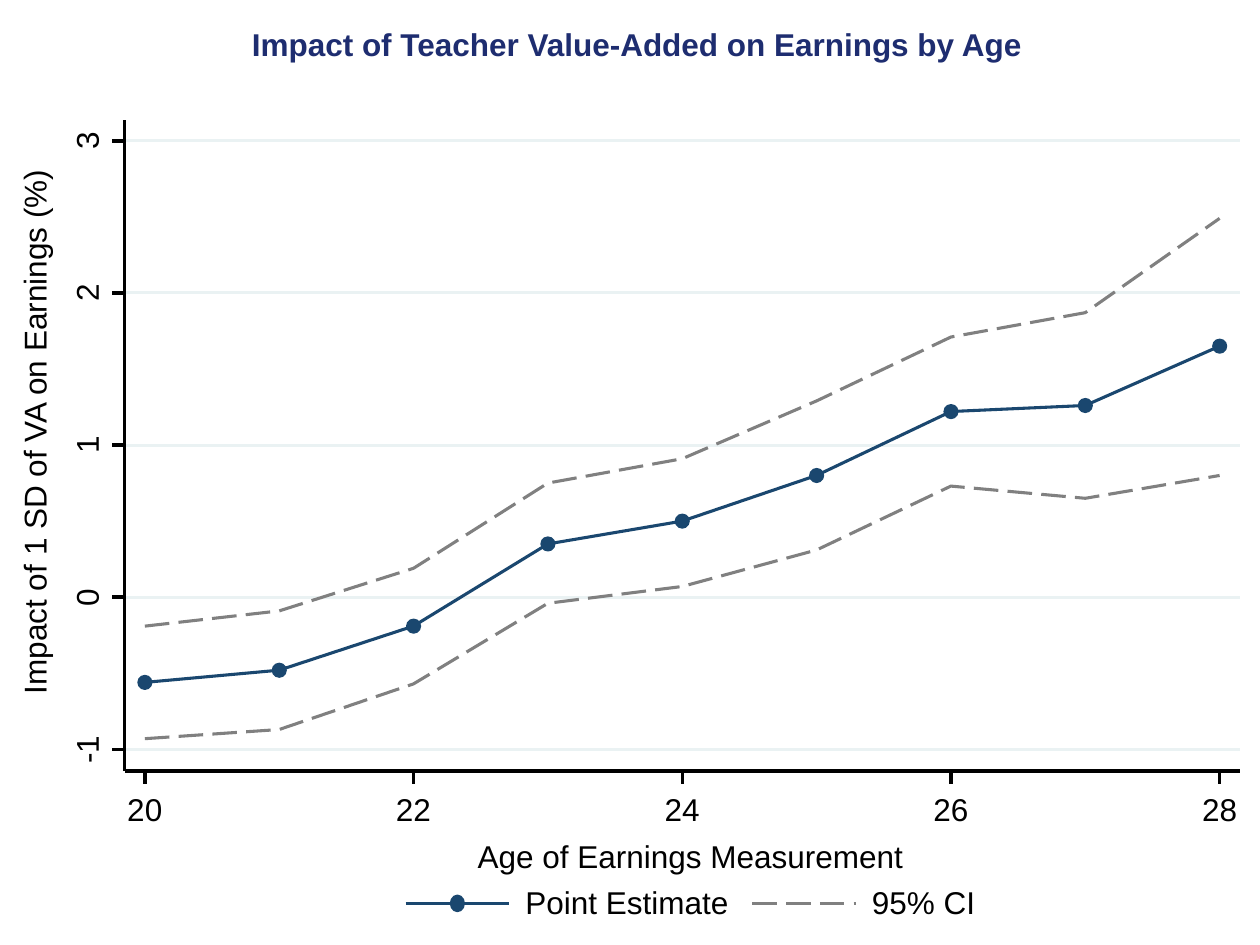
from pptx import Presentation
from pptx import util as u
from pptx.dml.color import RGBColor
from pptx.enum import dml, shapes, text
from pptx.oxml.ns import qn
from lxml import etree

THEME = {
    "font": "Arial", "size": 18, "title": "1E2D70", "ink": "000000",
    "estimate": "1A476F", "interval": "808080", "grid": "EAF2F3",
    "stroke": 1.75, "hairline": 0,
}
TITLE = "Impact of Teacher Value-Added on Earnings by Age"
X_TITLE = "Age of Earnings Measurement"
Y_TITLE = "Impact of 1 SD of VA on Earnings (%)"
AGES = range(20, 29)
ESTIMATE = [-0.56, -0.48, -0.19, 0.35, 0.5, 0.8, 1.22, 1.26, 1.65]
UPPER = [-0.19, -0.09, 0.19, 0.75, 0.91, 1.29, 1.71, 1.87, 2.49]
LOWER = [-0.93, -0.87, -0.57, -0.04, 0.07, 0.31, 0.73, 0.65, 0.8]
X_TICKS = range(20, 29, 2)
Y_TICKS = range(-1, 4)

LEFT, RIGHT, TOP, BOTTOM = 0.99, 9.84, 0.95, 6.12
TICK, DOT = 0.1, 0.11
LEGEND_Y, KEY_WIDTH = 7.17, 0.82


def x_at(age):
    return 1.15 + (age - 20) * 8.53 / 8


def y_at(percent):
    return 4.74 - percent * 1.2075


def color(name):
    return RGBColor.from_string(THEME[name])


def style_line(shape, ink, width, dashed=False):
    shape.line.color.rgb = color(ink)
    shape.line.width = u.Pt(THEME[width])
    if dashed:
        shape.line.dash_style = dml.MSO_LINE.LONG_DASH


def add_line(parent, start, end, ink="ink", width="hairline", dashed=False):
    points = [u.Inches(value) for value in (*start, *end)]
    line = parent.shapes.add_connector(shapes.MSO_CONNECTOR.STRAIGHT, *points)
    style_line(line, ink, width, dashed)
    etree.SubElement(line._element.spPr, qn("a:effectLst"))


def add_curve(parent, values, ink, dashed=False):
    points = [(u.Inches(x_at(age)), u.Inches(y_at(value)))
              for age, value in zip(AGES, values)]
    builder = parent.shapes.build_freeform(*points[0])
    builder.add_line_segments(points[1:], close=False)
    curve = builder.convert_to_shape()
    curve.fill.background()
    curve.shadow.inherit = False
    style_line(curve, ink, "stroke", dashed)


def add_dot(parent, x, y, height=DOT):
    dot = parent.shapes.add_shape(
        shapes.MSO_SHAPE.OVAL, u.Inches(x - DOT / 2), u.Inches(y - height / 2),
        u.Inches(DOT), u.Inches(height))
    dot.fill.solid()
    dot.fill.fore_color.rgb = color("estimate")
    dot.shadow.inherit = False
    style_line(dot, "estimate", "hairline")


def write(box, words, ink="ink", bold=False, align=None):
    frame = box.text_frame
    frame.text = words
    frame.margin_left = frame.margin_right = 0
    frame.margin_top = frame.margin_bottom = 0
    frame.vertical_anchor = text.MSO_ANCHOR.TOP
    frame.word_wrap = False
    frame.auto_size = text.MSO_AUTO_SIZE.SHAPE_TO_FIT_TEXT
    para = frame.paragraphs[0]
    para.alignment = align
    font = para.runs[0].font
    font.name, font.size, font.bold = THEME["font"], u.Pt(THEME["size"]), bold
    font.color.rgb = color(ink)


def add_label(parent, words, left, top, width, height=0.3, rotation=0):
    box = parent.shapes.add_textbox(*map(u.Inches, (left, top, width, height)))
    box.rotation = rotation
    write(box, words)


def add_title(page):
    title = page.shapes.title
    title.left, title.top = u.Inches(1.97), u.Inches(0.2)
    title.width, title.height = u.Inches(6.17), u.Inches(0.3)
    write(title, TITLE, "title", True, text.PP_ALIGN.CENTER)


def add_legend(page):
    legend = page.shapes.add_group_shape()
    for words, left, label_left, width, ink, dashed in (
            ("Point Estimate", 3.22, 4.17, 1.63, "estimate", False),
            ("95% CI", 5.97, 6.92, 0.83, "interval", True)):
        add_line(legend, (left, LEGEND_Y), (left + KEY_WIDTH, LEGEND_Y),
                 ink, "stroke", dashed)
        if not dashed:
            add_dot(legend, left + KEY_WIDTH / 2, LEGEND_Y, 0.13)
        add_label(legend, words, label_left, 7.01, width)


def add_plot(page):
    plot = page.shapes.add_group_shape()
    for tick in Y_TICKS:
        add_line(plot, (LEFT, y_at(tick)), (RIGHT, y_at(tick)), "grid", "stroke")
    add_curve(plot, ESTIMATE, "estimate")
    for age, value in zip(AGES, ESTIMATE):
        add_dot(plot, x_at(age), y_at(value))
    for bound in (UPPER, LOWER):
        add_curve(plot, bound, "interval", dashed=True)

    add_line(plot, (LEFT, BOTTOM), (LEFT, TOP))
    for tick in Y_TICKS:
        y = y_at(tick)
        width = 0.36 if tick < 0 else 0.27
        add_line(plot, (LEFT, y), (LEFT - TICK, y))
        add_label(plot, str(tick), 0.72 - width / 2, y - 0.25, width, 0.37, 270)

    add_line(plot, (LEFT, BOTTOM), (RIGHT, BOTTOM))
    for tick in X_TICKS:
        x = x_at(tick)
        add_line(plot, (x, BOTTOM), (x, BOTTOM + TICK))
        add_label(plot, str(tick), x - 0.14, 6.27, 0.41, 0.38)


def main():
    deck = Presentation()
    deck.slide_width, deck.slide_height = u.Inches(10), u.Inches(7.5)
    page = deck.slides.add_slide(deck.slide_layouts[5])
    add_label(page, Y_TITLE, -1.83, 3.26, 4.2, rotation=270)
    add_title(page)
    add_label(page, X_TITLE, 3.79, 6.64, 3.41)
    add_legend(page)
    add_plot(page)
    deck.save("out.pptx")


if __name__ == "__main__":
    main()
